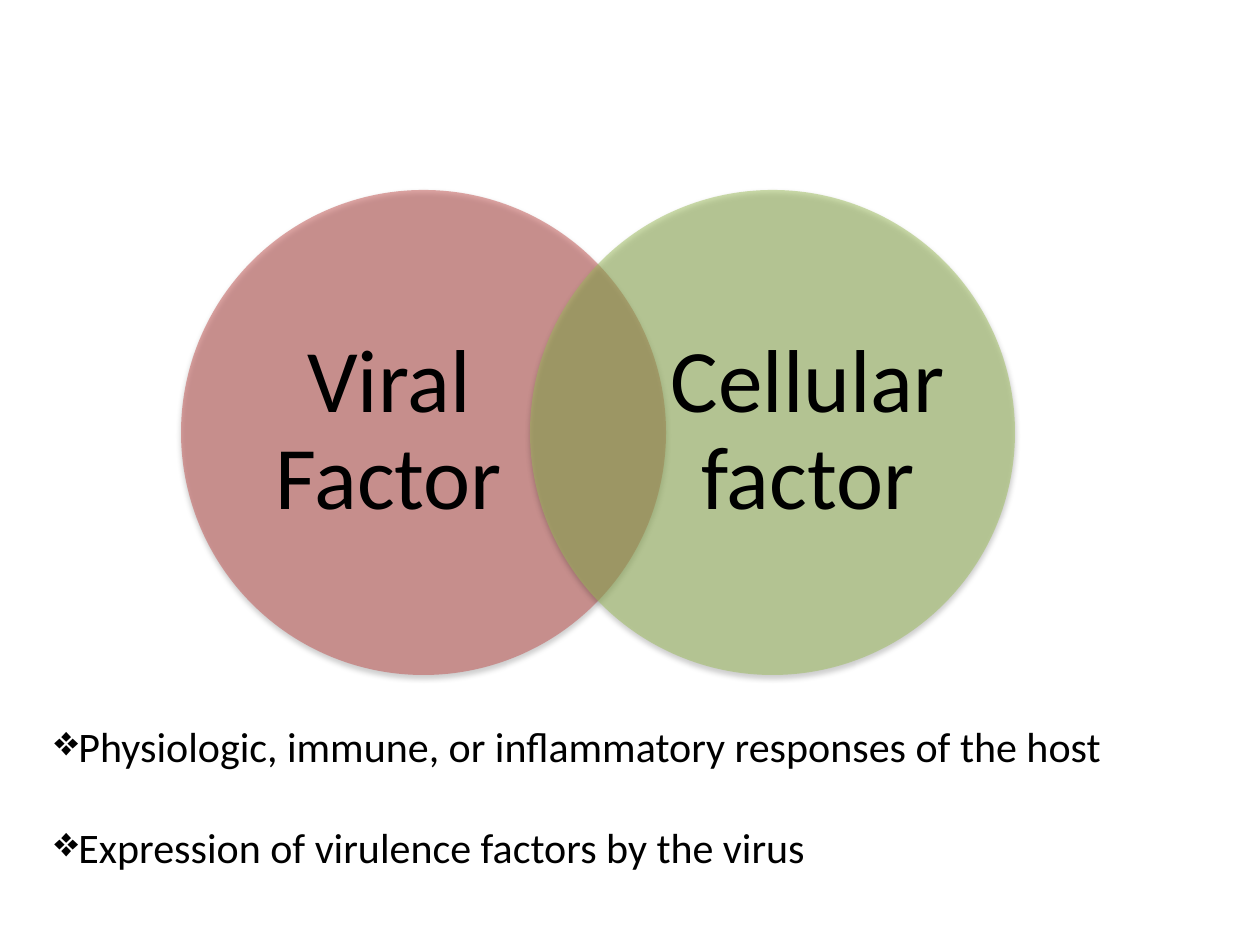
"""Build a slide with two overlapping factor circles and a bulleted list."""
from lxml import etree
from pptx import Presentation
from pptx.dml.color import RGBColor
from pptx.enum.shapes import MSO_SHAPE
from pptx.enum.text import MSO_ANCHOR, MSO_AUTO_SIZE, PP_ALIGN
from pptx.oxml import parse_xml
from pptx.oxml.ns import nsdecls, qn
from pptx.util import Pt

ELLIPSE = MSO_SHAPE.OVAL
MIDDLE, TOP = MSO_ANCHOR.MIDDLE, MSO_ANCHOR.TOP
CENTER, LEFT = PP_ALIGN.CENTER, PP_ALIGN.LEFT
GROW, FIXED = MSO_AUTO_SIZE.SHAPE_TO_FIT_TEXT, MSO_AUTO_SIZE.NONE
EMU_PER_PX = 914400 / 126
SHADOW = (
    f'<a:effectLst {nsdecls("a")}><a:outerShdw blurRad="40000" dist="20000" '
    'dir="5400000" rotWithShape="0"><a:srgbClr val="000000">'
    '<a:alpha val="38000"/></a:srgbClr></a:outerShdw></a:effectLst>'
)


def emu(*lengths):
    return [round(length * EMU_PER_PX) for length in lengths]


def color(value):
    return RGBColor.from_string(value)


def write(para, text, size=24, font="Calibri", ink="000000", align=LEFT,
          line=1.0, before=0, bullet=None):
    para.alignment = align
    para.line_spacing = line
    para.space_before = Pt(before)
    if bullet:
        mark = etree.SubElement(para._p.get_or_add_pPr(), qn("a:buChar"))
        mark.set("char", bullet)
    span = para.add_run()
    span.text = text
    span.font.size = Pt(size)
    span.font.name = font
    span.font.color.rgb = color(ink)


class SlideBuilder:
    def __init__(self, width, height):
        self.deck = Presentation()
        self.deck.slide_width, self.deck.slide_height = emu(width, height)
        self.page = self.deck.slides.add_slide(self.deck.slide_layouts[6])

    def circle(self, left, top, size, fill):
        shape = self.page.shapes.add_shape(ELLIPSE, *emu(left, top, size, size))
        shape.fill.solid()
        shape.fill.fore_color.rgb = color(fill)
        shape.line.fill.background()
        tint = shape._element.spPr.find(qn("a:solidFill"))[0]
        etree.SubElement(tint, qn("a:alpha")).set("val", "50000")
        shape._element.spPr.append(parse_xml(SHADOW))

    def text_box(self, left, top, width, height, anchor=TOP, fit=FIXED, inset=True):
        box = self.page.shapes.add_textbox(*emu(left, top, width, height))
        frame = box.text_frame
        frame.word_wrap = True
        frame.auto_size = fit
        frame.vertical_anchor = anchor
        if not inset:
            frame.margin_left = frame.margin_right = 0
            frame.margin_top = frame.margin_bottom = 0
        return frame

    def label(self, left, top, width, height, text):
        frame = self.text_box(left, top, width, height, anchor=MIDDLE, inset=False)
        write(frame.paragraphs[0], text, size=51, align=CENTER, line=0.9)

    def bullets(self, left, top, width, height, items, gap):
        frame = self.text_box(left, top, width, height, fit=GROW)
        for index, item in enumerate(items):
            para = frame.add_paragraph() if index else frame.paragraphs[0]
            write(para, item, before=gap if index else 0, bullet="❖")

    def save(self):
        self.deck.save("out.pptx")


def main():
    slide = SlideBuilder(1260, 945)
    factors = [
        (181, "C0504D", 249, "Viral Factor"),
        (530, "9BBB59", 668, "Cellular factor"),
    ]
    for circle_left, fill, label_left, text in factors:
        slide.circle(circle_left, 190, 485, fill)
        slide.label(label_left, 247, 280, 370, text)
    slide.bullets(42, 714, 1144, 165, [
        "Physiologic, immune, or inflammatory responses of the host",
        "Expression of virulence factors by the virus",
    ], gap=29)
    slide.save()


if __name__ == "__main__":
    main()
